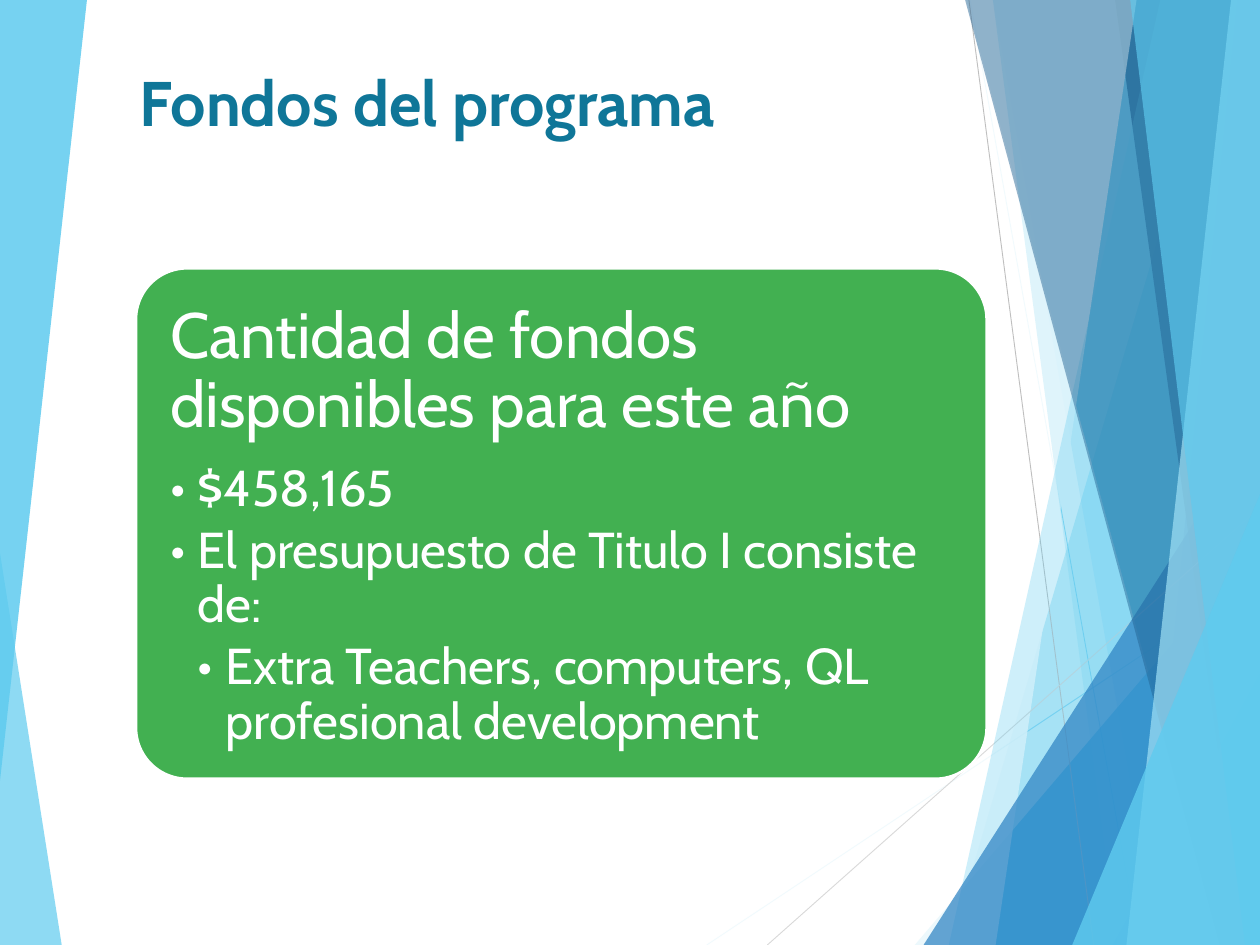
from lxml.etree import SubElement
from pptx import Presentation
from pptx.dml.color import RGBColor
from pptx.enum.shapes import MSO_CONNECTOR, MSO_SHAPE as SHAPE
from pptx.enum.text import MSO_ANCHOR, MSO_AUTO_SIZE, PP_ALIGN
from pptx.oxml.ns import qn
from pptx.util import Inches, Pt

SKY, CYAN, BLUE, NAVY, WHITE = "5FCBEF", "17B0E4", "2E83C3", "226292", "FFFFFF"
GREEN, TEAL = "42B051", "0F7698"
FONT = "Cabin"


def rgb(value):
    return RGBColor.from_string(value)


def set_alpha(props, percent):
    color = next(props.iter(qn("a:srgbClr")))
    SubElement(color, qn("a:alpha"), val=str(percent * 1000))


def write(p, text, size, color=WHITE, bold=False, after=0, spacing=None, level=0):
    p.alignment = PP_ALIGN.LEFT
    p.space_before, p.space_after = Pt(0), Pt(after)
    if spacing:
        p.line_spacing = spacing
    if level:
        p.level = level
        indent = Inches(0.31)
        pPr = p._p.get_or_add_pPr()
        pPr.set("marL", str(indent * level))
        pPr.set("indent", str(-indent))
        SubElement(pPr, qn("a:buFont"), typeface=FONT)
        SubElement(pPr, qn("a:buChar"), char="•")
    r = p.add_run()
    r.text = text
    r.font.name, r.font.size, r.font.bold = FONT, Pt(size), bold
    r.font.color.rgb = rgb(color)


class Deck:
    def __init__(self, width, height):
        self.prs = Presentation()
        self.prs.slide_width, self.prs.slide_height = Inches(width), Inches(height)
        self.col, self.row = Inches(width) / 100, Inches(height) / 100
        self.s = self.prs.slides.add_slide(self.prs.slide_layouts[5])

    def at(self, x, y):
        return round(x * self.col), round(y * self.row)

    def paint(self, sp, color, alpha=100):
        sp.shadow.inherit = False
        sp.fill.solid()
        sp.fill.fore_color.rgb = rgb(color)
        sp.line.fill.background()
        if alpha < 100:
            set_alpha(sp._element.spPr, alpha)
        return sp

    def shape(self, kind, x, y, w, h, color, alpha=100, adj=None):
        sp = self.s.shapes.add_shape(kind, *self.at(x, y), *self.at(w, h))
        if adj is not None:
            sp.adjustments[0] = adj
        return self.paint(sp, color, alpha)

    def wedge(self, left, top, color, alpha):
        self.shape(SHAPE.ISOSCELES_TRIANGLE, left, top, 100 - left, 100 - top,
                   color, alpha, adj=1)

    def band(self, top_x, bottom_x, color, alpha):
        outline = self.s.shapes.build_freeform(*self.at(top_x, 0), scale=1)
        corners = [(100, 0), (100, 100), (bottom_x, 100)]
        outline.add_line_segments([self.at(*c) for c in corners], close=True)
        self.paint(outline.convert_to_shape(), color, alpha)

    def line(self, start, end, color, alpha=100):
        c = self.s.shapes.add_connector(MSO_CONNECTOR.STRAIGHT,
                                        *self.at(*start), *self.at(*end))
        c.line.width = Pt(0.75)
        c.line.color.rgb = rgb(color)
        spPr = c._element.spPr
        if alpha < 100:
            set_alpha(spPr, alpha)
        SubElement(spPr, qn("a:effectLst"))

    def title(self, text, x, y, w, h):
        sp = self.s.shapes.title
        sp.left, sp.top = self.at(x, y)
        sp.width, sp.height = self.at(w, h)
        tf = sp.text_frame
        tf.word_wrap, tf.auto_size = True, MSO_AUTO_SIZE.NONE
        tf.vertical_anchor = MSO_ANCHOR.TOP
        write(tf.paragraphs[0], text, 51.2, color=TEAL, bold=True)
        sp._element.getparent().append(sp._element)

    def card(self, x, y, w, h, heading, bullets):
        sp = self.shape(SHAPE.ROUNDED_RECTANGLE, x, y, w, h, GREEN, adj=0.1)
        sp.line.color.rgb, sp.line.width = rgb(WHITE), Pt(2)
        tf = sp.text_frame
        tf.word_wrap, tf.vertical_anchor = True, MSO_ANCHOR.TOP
        tf.margin_left = tf.margin_right = tf.margin_top = tf.margin_bottom = Inches(0.22)
        write(tf.paragraphs[0], heading, 52, after=18, spacing=0.9)
        for level, text in bullets:
            write(tf.add_paragraph(), text, 41, after=6, spacing=0.9, level=level)


def main():
    d = Deck(14.22, 10.67)

    d.shape(SHAPE.RIGHT_TRIANGLE, 0, 58.5, 4.9, 41.5, SKY, 70)
    d.line((56.1, 100), (100, 61), SKY, 70)
    d.line((77, 0), (90.4, 100), SKY, 70)
    d.band(97.5, 75.4, SKY, 36)
    d.band(78.8, 92, SKY, 20)
    d.wedge(72.6, 57.2, CYAN, 66)
    d.band(76.7, 97, CYAN, 50)
    d.band(98.2, 90.7, BLUE, 70)
    d.band(88.5, 98.8, NAVY, 82)
    d.wedge(88.3, 71.3, CYAN, 66)

    left = d.shape(SHAPE.ISOSCELES_TRIANGLE, 0, 0, 6.9, 82.6, SKY, 85, adj=1)
    left.rotation = 180
    d.shape(SHAPE.PARALLELOGRAM, 13.3, 0, 76.9, 100, WHITE, 88, adj=0.149)
    d.line((76.9, 0), (86.8, 100), "BFBFBF")
    d.line((100, 53.7), (60.9, 100), "D9D9D9")
    d.band(92.1, 75.3, SKY, 30)
    d.title("Fondos del programa", 10.4, 6.3, 53.2, 19.2)
    d.band(78.8, 88.7, SKY, 20)
    d.wedge(73.3, 44.4, BLUE, 72)
    d.band(76.6, 96.8, NAVY, 47)
    d.band(97.7, 89.4, "9FE0F5", 70)
    d.band(89.7, 98.8, SKY, 65)
    d.wedge(85.1, 52.3, SKY, 80)

    d.card(10.8, 28.4, 67.5, 54, "Cantidad de fondos disponibles para este año", [
        (1, "$458,165"),
        (1, "El presupuesto de Titulo I consiste de:"),
        (2, "Extra Teachers, computers, QL profesional development"),
    ])
    d.prs.save("out.pptx")


if __name__ == "__main__":
    main()
